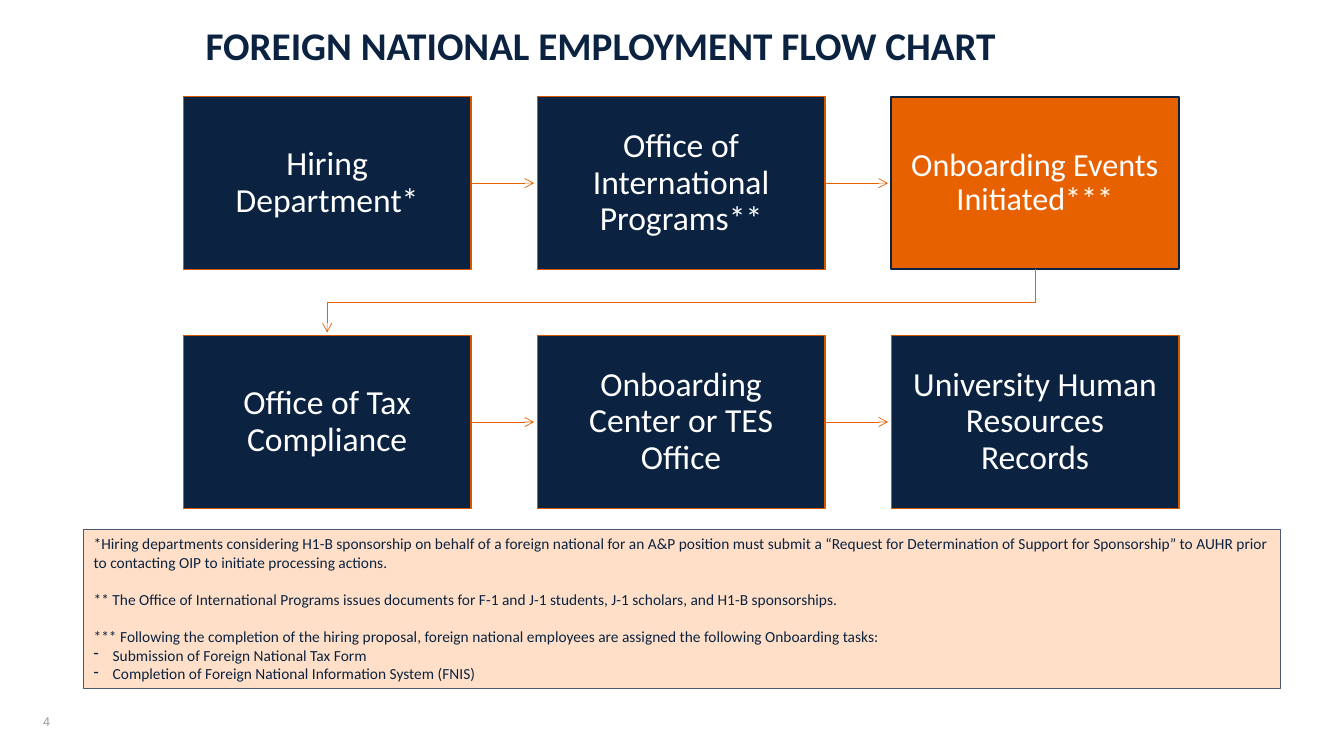
from dataclasses import dataclass
from lxml.etree import SubElement
from pptx import Presentation
from pptx.dml.color import RGBColor as Rgb
from pptx.enum.shapes import MSO_CONNECTOR as Link, MSO_SHAPE as Kind
from pptx.enum.text import MSO_ANCHOR as Anchor, PP_ALIGN as Align
from pptx.oxml.ns import qn
from pptx.util import Cm, Pt

HUES = {
    "navy": "0B2341",
    "orange": "E86100",
    "rust": "D35800",
    "peach": "FFDFC7",
    "slate": "485970",
    "gray": "999999",
    "white": "FFFFFF",
}
LEFT, TOP = 4.62, 2.44
WIDE, HIGH = 7.25, 4.35
STEP, DROP = 8.92, 6.02
GAP = 0.08


@dataclass
class Stage:
    text: str
    fill: str = "navy"
    edge: str = "rust"
    line: float = 1
    size: int = 24
    inset: float = 0.48


@dataclass
class Note:
    text: str
    before: float = 0
    dash: bool = False


ROWS = [
    [
        Stage("Hiring Department*"),
        Stage("Office of International Programs**"),
        Stage("Onboarding Events Initiated***", "orange", "navy", 1.5, 23, 0.46),
    ],
    [
        Stage("Office of Tax Compliance"),
        Stage("Onboarding Center or TES Office"),
        Stage("University Human Resources Records"),
    ],
]
NOTES = [
    Note("*Hiring departments considering H1-B sponsorship on behalf of a foreign "
         "national for an A&P position must submit a “Request for Determination of "
         "Support for Sponsorship” to AUHR prior to contacting OIP to initiate "
         "processing actions."),
    Note("** The Office of International Programs issues documents for F-1 and J-1 "
         "students, J-1 scholars, and H1-B sponsorships.", 13.4),
    Note("*** Following the completion of the hiring proposal, foreign national "
         "employees are assigned the following Onboarding tasks:", 13.4),
    Note("Submission of Foreign National Tax Form", dash=True),
    Note("Completion of Foreign National Information System (FNIS)", dash=True),
]


def hue(name: str) -> Rgb:
    return Rgb.from_string(HUES[name])


def style(para, size: float, color: str, face: str = "Calibri", bold: bool = False) -> None:
    for run in para.runs:
        run.font.size = Pt(size)
        run.font.name = face
        run.font.bold = bold
        run.font.color.rgb = hue(color)


def panel(slide, x: float, y: float, w: float, h: float, fill: str, edge: str, line: float):
    box = slide.shapes.add_shape(Kind.RECTANGLE, Cm(x), Cm(y), Cm(w), Cm(h))
    box.shadow.inherit = False
    box.fill.solid()
    box.fill.fore_color.rgb = hue(fill)
    box.line.color.rgb = hue(edge)
    box.line.width = Pt(line)
    box.text_frame.word_wrap = True
    return box


def label(slide, x: float, y: float, w: float, h: float, text: str):
    frame = slide.shapes.add_textbox(Cm(x), Cm(y), Cm(w), Cm(h)).text_frame
    frame.word_wrap = True
    frame.text = text
    return frame


def point(line) -> None:
    line.color.rgb = hue("orange")
    line.width = Pt(0.5)
    SubElement(line._get_or_add_ln(), qn("a:tailEnd"), type="arrow")


def arrow(slide, x: float, y: float) -> None:
    end = x + STEP - WIDE - GAP
    link = slide.shapes.add_connector(Link.STRAIGHT, Cm(x), Cm(y), Cm(end), Cm(y))
    point(link.line)
    SubElement(link._element.spPr, qn("a:effectLst"))


def bend(slide) -> None:
    near = LEFT + WIDE / 2
    far = near + 2 * STEP
    base, tip = TOP + HIGH, TOP + DROP - GAP
    mid = (TOP + HIGH + TOP + DROP) / 2
    path = slide.shapes.build_freeform(Cm(far), Cm(base))
    turns = [(far, mid), (near, mid), (near, tip)]
    path.add_line_segments([(Cm(x), Cm(y)) for x, y in turns], close=False)
    shape = path.convert_to_shape()
    shape.shadow.inherit = False
    shape.fill.background()
    point(shape.line)


def block(slide, stage: Stage, x: float, y: float) -> None:
    box = panel(slide, x, y, WIDE, HIGH, stage.fill, stage.edge, stage.line)
    frame = box.text_frame
    frame.vertical_anchor = Anchor.MIDDLE
    frame.margin_left = frame.margin_right = Cm(stage.inset)
    frame.margin_top = frame.margin_bottom = Cm(stage.inset)
    frame.text = stage.text
    para = frame.paragraphs[0]
    para.alignment = Align.CENTER
    para.line_spacing = 0.9
    style(para, stage.size, "white")


def legend(slide) -> None:
    frame = panel(slide, 2.11, 13.34, 30.15, 4.01, "peach", "slate", 0.75).text_frame
    frame.vertical_anchor = Anchor.TOP
    frame.text = "\n".join(note.text for note in NOTES)
    for para, note in zip(frame.paragraphs, NOTES):
        para.alignment = Align.LEFT
        if note.before:
            para.space_before = Pt(note.before)
        if note.dash:
            props = para._p.get_or_add_pPr()
            props.set("marL", str(Cm(0.48)))
            props.set("indent", str(Cm(-0.48)))
            SubElement(props, qn("a:buChar"), char="-")
        style(para, 11, "navy")


def main() -> None:
    deck = Presentation()
    deck.slide_width, deck.slide_height = Cm(33.87), Cm(19.05)
    slide = deck.slides.add_slide(deck.slide_layouts[6])

    title = label(slide, 4.93, 0.64, 27.76, 1.85, "FOREIGN NATIONAL EMPLOYMENT FLOW CHART")
    title.paragraphs[0].line_spacing = 0.8
    style(title.paragraphs[0], 28, "navy", bold=True)

    for r, row in enumerate(ROWS):
        for c, stage in enumerate(row):
            x, y = LEFT + c * STEP, TOP + r * DROP
            block(slide, stage, x, y)
            if c < len(row) - 1:
                arrow(slide, x + WIDE, y + HIGH / 2)
    bend(slide)
    legend(slide)

    page = label(slide, 0.84, 17.68, 0.89, 1.02, "4")
    page.vertical_anchor = Anchor.MIDDLE
    style(page.paragraphs[0], 9, "gray", "Arial")
    deck.save("out.pptx")


if __name__ == "__main__":
    main()
